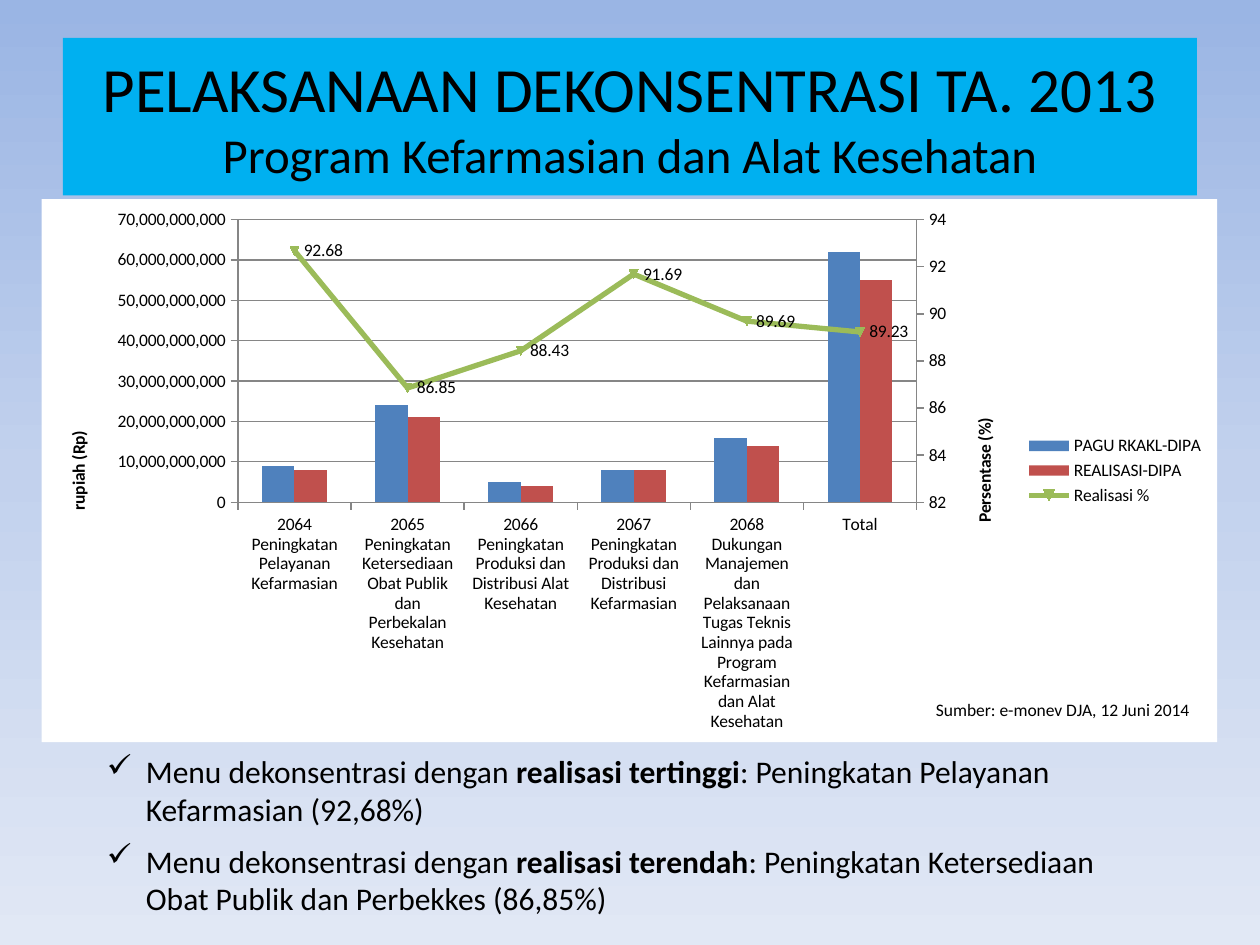
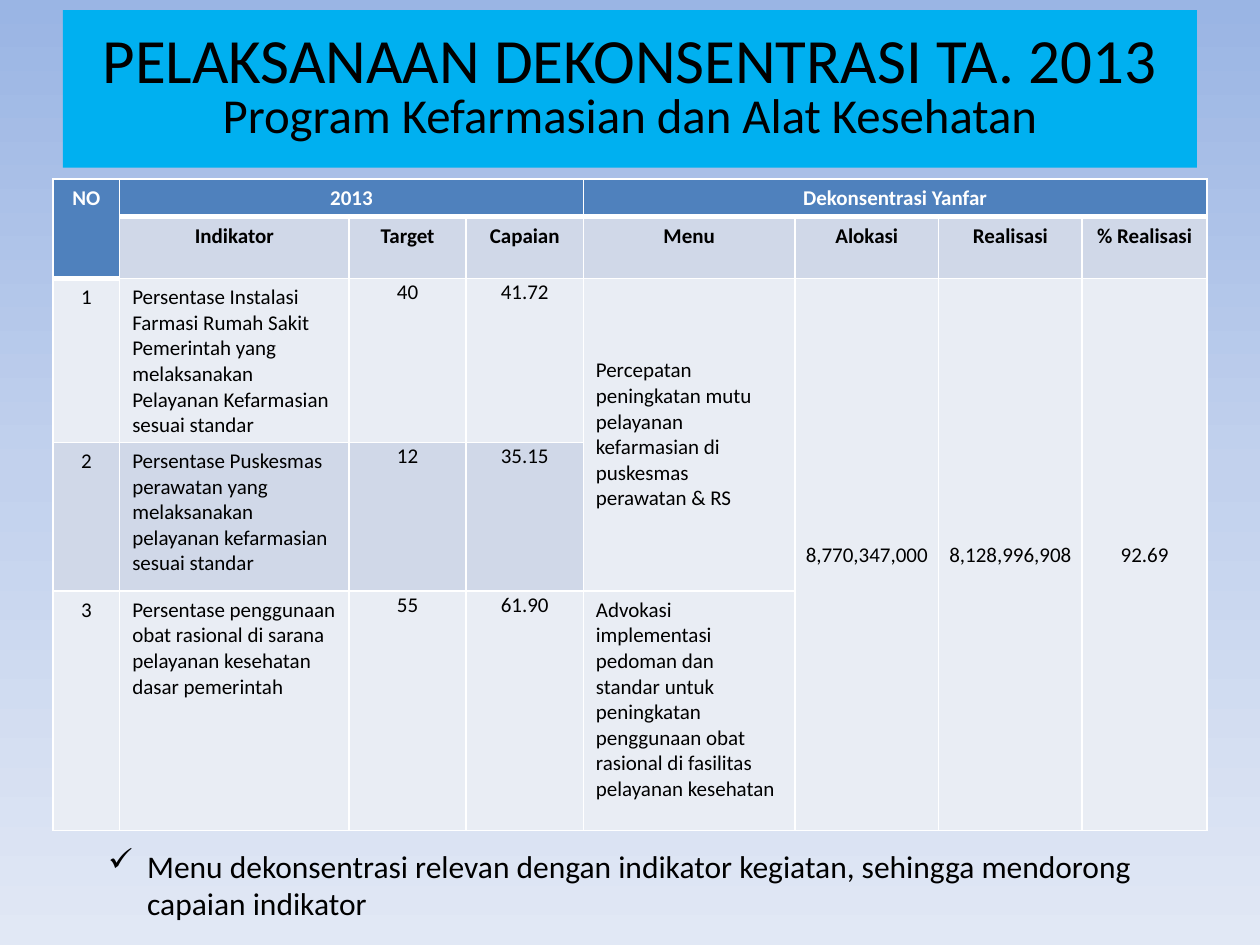
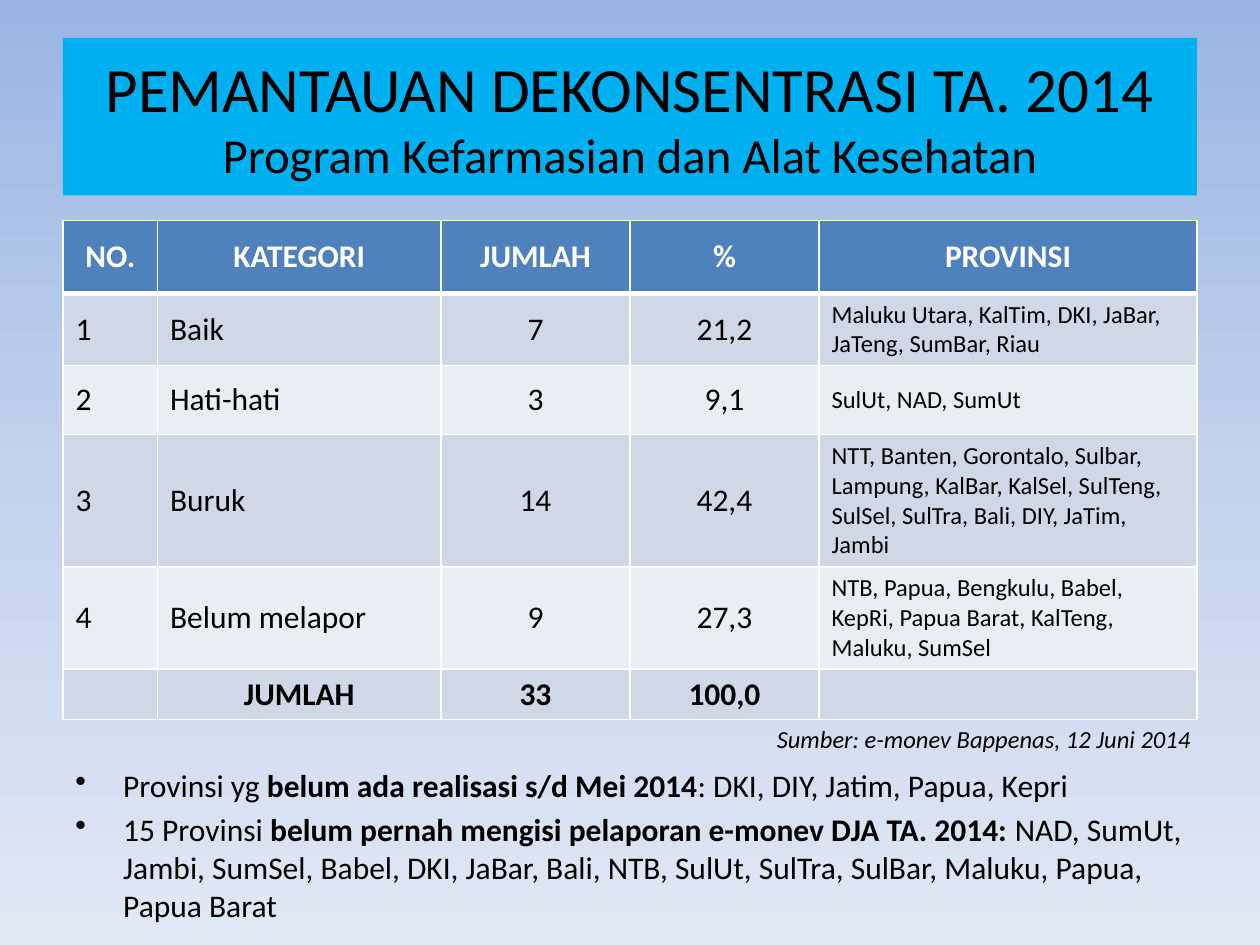
from copy import deepcopy

from lxml import etree
from pptx import Presentation
from pptx.chart.data import CategoryChartData
from pptx.dml.color import RGBColor
from pptx.enum.chart import XL_CHART_TYPE, XL_LABEL_POSITION, XL_LEGEND_POSITION, XL_TICK_MARK
from pptx.enum.shapes import MSO_SHAPE
from pptx.enum.text import MSO_ANCHOR, MSO_AUTO_SIZE, PP_ALIGN
from pptx.oxml import parse_xml
from pptx.oxml.ns import nsdecls, qn
from pptx.util import Inches, Pt

LEFT, CENTER, RIGHT = PP_ALIGN.LEFT, PP_ALIGN.CENTER, PP_ALIGN.RIGHT
TOP, MIDDLE = MSO_ANCHOR.TOP, MSO_ANCHOR.MIDDLE
OUTSIDE = XL_TICK_MARK.OUTSIDE

# Shared look
FONT = "Calibri"
BLACK, WHITE, GRAY = "000000", "FFFFFF", "868686"
BAND, HEADER, DARK_ROW, LIGHT_ROW = "00B0F0", "4F81BD", "D0D8E8", "E9EDF4"
BACKGROUND = [(0, "9AB5E4"), (0.5, "C2D1ED"), (1, "E1E8F5")]
PROGRAM = "Program Kefarmasian dan Alat Kesehatan"

# Slide 1: budget chart
CATEGORIES = [
    "2064 Peningkatan Pelayanan Kefarmasian",
    "2065 Peningkatan Ketersediaan Obat Publik dan Perbekalan Kesehatan",
    "2066 Peningkatan Produksi dan Distribusi Alat Kesehatan",
    "2067 Peningkatan Produksi dan Distribusi Kefarmasian",
    "2068 Dukungan Manajemen dan Pelaksanaan Tugas Teknis Lainnya pada "
    "Program Kefarmasian dan Alat Kesehatan",
    "Total",
]
BILLION = 1_000_000_000
SERIES = [
    ("PAGU RKAKL-DIPA", "4F81BD", [value * BILLION for value in (9, 24, 5, 8, 16, 62)]),
    ("REALISASI-DIPA", "C0504D", [value * BILLION for value in (8, 21, 4, 8, 14, 55)]),
    ("Realisasi %", "9BBB59", [92.68, 86.85, 88.43, 91.69, 89.69, 89.23]),
]
FINDINGS = [
    [("Menu dekonsentrasi dengan ", False), ("realisasi tertinggi", True),
     (": Peningkatan Pelayanan Kefarmasian (92,68%)", False)],
    [("Menu dekonsentrasi dengan ", False), ("realisasi terendah", True),
     (": Peningkatan Ketersediaan Obat Publik dan Perbekkes (86,85%)", False)],
]

# Slide 2: indicators and their menus
INDICATOR_ROWS = [
    ["NO", "2013", "", "", "Dekonsentrasi Yanfar", "", "", ""],
    ["", "Indikator", "Target", "Capaian", "Menu", "Alokasi", "Realisasi", "% Realisasi"],
    ["1", "Persentase Instalasi Farmasi Rumah Sakit Pemerintah yang melaksanakan "
     "Pelayanan Kefarmasian sesuai standar", "40", "41.72",
     "Percepatan peningkatan mutu pelayanan kefarmasian di puskesmas perawatan & RS",
     "8,770,347,000", "8,128,996,908", "92.69"],
    ["2", "Persentase Puskesmas perawatan yang melaksanakan pelayanan kefarmasian "
     "sesuai standar", "12", "35.15", "", "", "", ""],
    ["3", "Persentase penggunaan obat rasional di sarana pelayanan kesehatan dasar "
     "pemerintah", "55", "61.90",
     "Advokasi implementasi pedoman dan standar untuk peningkatan penggunaan obat "
     "rasional di fasilitas pelayanan kesehatan", "", "", ""],
]
INDICATOR_WIDTHS = [0.53, 1.82, 0.93, 0.93, 1.68, 1.14, 1.14, 0.99]
INDICATOR_HEIGHTS = [0.3, 0.49, 1.3, 1.18, 1.9]
INDICATOR_FILLS = [HEADER, DARK_ROW, LIGHT_ROW, DARK_ROW, LIGHT_ROW]
# First row, first column, last row, last column
INDICATOR_MERGES = [(0, 0, 1, 0), (0, 1, 0, 3), (0, 4, 0, 7), (2, 4, 3, 4),
                    (2, 5, 4, 5), (2, 6, 4, 6), (2, 7, 4, 7)]
RELEVANCE = [("Menu dekonsentrasi relevan dengan indikator kegiatan, sehingga mendorong "
              "capaian indikator", False)]

# Slide 3: reporting categories
REPORT_ROWS = [
    ["NO.", "KATEGORI", "JUMLAH", "%", "PROVINSI"],
    ["1", "Baik", "7", "21,2", "Maluku Utara, KalTim, DKI, JaBar, JaTeng, SumBar, Riau"],
    ["2", "Hati-hati", "3", "9,1", "SulUt, NAD, SumUt"],
    ["3", "Buruk", "14", "42,4", "NTT, Banten, Gorontalo, Sulbar, Lampung, KalBar, KalSel, "
     "SulTeng, SulSel, SulTra, Bali, DIY, JaTim, Jambi"],
    ["4", "Belum melapor", "9", "27,3", "NTB, Papua, Bengkulu, Babel, KepRi, Papua Barat, "
     "KalTeng, Maluku, SumSel"],
    ["", "JUMLAH", "33", "100,0", ""],
]
REPORT_WIDTHS = [0.75, 2.25, 1.5, 1.5, 3]
REPORT_HEIGHTS = [0.58, 0.57, 0.55, 1.05, 0.81, 0.4]
REPORT_FILLS = [HEADER, DARK_ROW, LIGHT_ROW, DARK_ROW, LIGHT_ROW, DARK_ROW]
PROVINCE_NOTES = [
    [("Provinsi yg ", False), ("belum ada realisasi s/d Mei 2014", True),
     (": DKI, DIY, Jatim, Papua, Kepri", False)],
    [("15 Provinsi ", False),
     ("belum pernah mengisi pelaporan e-monev DJA TA. 2014: ", True),
     ("NAD, SumUt, Jambi, SumSel, Babel, DKI, JaBar, Bali, NTB, SulUt, SulTra, SulBar, "
      "Maluku, Papua, Papua Barat", False)],
]


def color(value):
    return RGBColor.from_string(value)


def set_font(font, size, ink=BLACK, **values):
    font.color.rgb = color(ink)
    for name, value in dict(name=FONT, size=Pt(size), **values).items():
        setattr(font, name, value)


def add_run(paragraph, text, size, ink=BLACK, **values):
    run = paragraph.add_run()
    run.text = text
    set_font(run.font, size, ink, **values)


def add_slide(presentation):
    slide = presentation.slides.add_slide(presentation.slide_layouts[6])
    fill = slide.background.fill
    fill.gradient()
    fill.gradient_angle = 270
    stop_list = next(slide.element.iter(qn("a:gsLst")))
    stop_list.append(deepcopy(stop_list[0]))
    for stop, (position, value) in zip(fill.gradient_stops, BACKGROUND):
        stop.position = position
        stop.color.rgb = color(value)
    return slide


def add_title(slide, title, top=0.3, line_spacing=1.0):
    band = slide.shapes.add_shape(MSO_SHAPE.RECTANGLE, Inches(0.5), Inches(top),
                                  Inches(9), Inches(1.25))
    band.shadow.inherit = False
    band.fill.solid()
    band.fill.fore_color.rgb = color(BAND)
    band.line.fill.background()
    band.text_frame.vertical_anchor = MIDDLE
    paragraph = band.text_frame.paragraphs[0]
    paragraph.alignment = CENTER
    paragraph.line_spacing = line_spacing
    add_run(paragraph, title, 36)
    paragraph.add_line_break()
    add_run(paragraph, PROGRAM, 27.9)


def add_text_frame(slide, place, grow=True):
    frame = slide.shapes.add_textbox(*map(Inches, place)).text_frame
    frame.word_wrap = True
    frame.auto_size = MSO_AUTO_SIZE.SHAPE_TO_FIT_TEXT if grow else MSO_AUTO_SIZE.NONE
    return frame


def add_source(slide, place, text, size, alignment=LEFT, italic=False):
    paragraph = add_text_frame(slide, place).paragraphs[0]
    paragraph.alignment = alignment
    add_run(paragraph, text, size, italic=italic)


def add_bullets(slide, place, items, bullet="✓", indent=0.31, space=0, grow=True):
    frame = add_text_frame(slide, place, grow)
    for index, runs in enumerate(items):
        paragraph = frame.add_paragraph() if index else frame.paragraphs[0]
        paragraph.space_before = Pt(space)
        properties = paragraph._p.get_or_add_pPr()
        properties.set("marL", str(Inches(indent)))
        properties.set("indent", str(-Inches(indent)))
        etree.SubElement(properties, qn("a:buChar")).set("char", bullet)
        for text, bold in runs:
            add_run(paragraph, text, 18, bold=bold)


def set_borders(cell, widths):
    properties = cell._tc.get_or_add_tcPr()
    for index, (side, width) in enumerate(widths.items()):
        properties.insert(index, parse_xml(
            f'<a:{side} {nsdecls("a")} w="{Pt(width)}"><a:solidFill>'
            f'<a:srgbClr val="{WHITE}"/></a:solidFill></a:{side}>'))


def add_table(slide, left, top, widths, heights, rows, fills, style, merges=()):
    table = slide.shapes.add_table(len(rows), len(widths), Inches(left), Inches(top),
                                   Inches(sum(widths)), Inches(sum(heights))).table
    table.first_row = table.horz_banding = False
    for column, width in zip(table.columns, widths):
        column.width = Inches(width)
    for row, height in zip(table.rows, heights):
        row.height = Inches(height)

    # A merged header keeps its fill over every row it spans
    def fill_at(row, column):
        for first_row, first_column, last_row, last_column in merges:
            if first_row <= row <= last_row and first_column <= column <= last_column:
                return fills[first_row]
        return fills[row]

    for row, texts in enumerate(rows):
        for column, text in enumerate(texts):
            cell = table.cell(row, column)
            cell.fill.solid()
            cell.fill.fore_color.rgb = color(fill_at(row, column))
            under_header = row and fill_at(row - 1, column) == HEADER
            set_borders(cell, {"lnL": 1, "lnR": 1, "lnT": 3 if under_header else 1,
                               "lnB": 3 if fill_at(row, column) == HEADER else 1})
            alignment, font, cell_values = style(row, column)
            for name, value in cell_values.items():
                setattr(cell, name, value)
            if text:
                paragraph = cell.text_frame.paragraphs[0]
                paragraph.alignment = alignment
                add_run(paragraph, text, **font)
    for first_row, first_column, last_row, last_column in merges:
        table.cell(first_row, first_column).merge(table.cell(last_row, last_column))


def indicator_style(row, column):
    heading = row < 2
    font = dict(size=12, ink=BLACK if row else WHITE, bold=heading)
    values = dict(vertical_anchor=MIDDLE if row == 2 and column >= 4 else TOP)
    if not heading and column in (2, 3, 5, 6, 7):
        tight = Inches(0.01)
        values.update(margin_left=tight, margin_right=tight, margin_top=tight, margin_bottom=0)
    return CENTER if heading or column not in (1, 4) else LEFT, font, values


def report_style(row, column):
    heading, total = row == 0, row == len(REPORT_ROWS) - 1
    font = dict(size=14 if column == 4 and not heading else 18,
                ink=WHITE if heading else BLACK, bold=heading or total)
    centered = heading or total or column in (2, 3)
    return CENTER if centered else LEFT, font, dict(vertical_anchor=TOP if total else MIDDLE)


def set_axis_title(axis, text):
    paragraph = axis.axis_title.text_frame.paragraphs[0]
    add_run(paragraph, text, 10, bold=True)


def remove_children(element, name):
    for child in element.findall(qn(name)):
        element.remove(child)


def move_to_right_axis(chart, title):
    """Turn the last column series into a line on a second value axis."""
    plot_area = next(chart._chartSpace.iter(qn("c:plotArea")))
    bars = plot_area.find(qn("c:barChart"))
    series = bars.findall(qn("c:ser"))[-1]
    remove_children(series, "c:invertIfNegative")
    line_chart = parse_xml(
        f'<c:lineChart {nsdecls("c")}><c:grouping val="standard"/><c:varyColors val="0"/>'
        '<c:marker val="1"/><c:axId val="5001"/><c:axId val="5002"/></c:lineChart>')
    line_chart.insert(2, series)
    bars.addnext(line_chart)

    category_axis = plot_area.find(qn("c:catAx"))
    value_axis = plot_area.find(qn("c:valAx"))
    right_axis, hidden_axis = deepcopy(value_axis), deepcopy(category_axis)
    value_axis.addnext(right_axis)
    right_axis.addnext(hidden_axis)
    remove_children(right_axis, "c:majorGridlines")
    next(right_axis.iter(qn("a:t"))).text = title
    right_axis.find(qn("c:numFmt")).set("formatCode", "General")
    for axis, values in (
            (right_axis, dict(axId="5002", crossAx="5001", axPos="r", crosses="max")),
            (hidden_axis, dict(axId="5001", crossAx="5002", delete="1"))):
        for name, value in values.items():
            axis.find(qn(f"c:{name}")).set("val", value)


def add_budget_chart(slide):
    data = CategoryChartData()
    data.categories = CATEGORIES
    for name, _, values in SERIES:
        data.add_series(name, values)
    chart = slide.shapes.add_chart(XL_CHART_TYPE.COLUMN_CLUSTERED, Inches(0.33), Inches(1.58),
                                   Inches(9.33), Inches(4.31), data).chart
    set_font(chart.font, 10)
    chart.has_title = False
    chart.has_legend = True
    chart.legend.position = XL_LEGEND_POSITION.RIGHT
    chart.legend.include_in_layout = False
    chart._chartSpace.find(qn("c:txPr")).addprevious(parse_xml(
        f'<c:spPr {nsdecls("c", "a")}><a:solidFill><a:srgbClr val="{WHITE}"/></a:solidFill>'
        '<a:ln><a:noFill/></a:ln></c:spPr>'))

    # Axes
    value_axis = chart.value_axis
    for axis in (chart.category_axis, value_axis):
        axis.major_tick_mark = OUTSIDE
        axis.format.line.color.rgb = color(GRAY)
    value_axis.has_major_gridlines = True
    value_axis.major_gridlines.format.line.color.rgb = color(GRAY)
    value_axis.tick_labels.number_format = "#,##0"
    value_axis.tick_labels.number_format_is_linked = False
    set_axis_title(value_axis, "rupiah (Rp)")
    move_to_right_axis(chart, "Persentase (%)")

    # Columns and line
    columns, lines = chart.plots
    columns.gap_width, columns.overlap = 150, 0
    columns.vary_by_categories = False
    for series, (_, value, _) in zip(columns.series, SERIES):
        series.format.fill.solid()
        series.format.fill.fore_color.rgb = color(value)
    percentage = lines.series[0]
    percentage.smooth = False
    percentage.format.line.color.rgb = color(SERIES[-1][1])
    percentage.format.line.width = Pt(3)
    labels = percentage.data_labels
    labels.show_value = True
    labels.position = XL_LABEL_POSITION.RIGHT
    set_font(labels.font, 10)


def main():
    presentation = Presentation()
    presentation.slide_width, presentation.slide_height = Inches(10), Inches(7.5)

    # Slide 1
    slide = add_slide(presentation)
    add_title(slide, "PELAKSANAAN DEKONSENTRASI TA. 2013")
    add_budget_chart(slide)
    add_source(slide, (7.33, 5.5, 2.25, 0.27), "Sumber: e-monev DJA, 12 Juni 2014", 10)
    for index, finding in enumerate(FINDINGS):
        add_bullets(slide, (0.75, 5.92 + index * 0.71, 8.5, 0.71), [finding])

    # Slide 2
    slide = add_slide(presentation)
    add_title(slide, "PELAKSANAAN DEKONSENTRASI TA. 2013", top=0.08, line_spacing=0.8)
    add_bullets(slide, (0.76, 6.67, 8.5, 0.71), [RELEVANCE])
    add_table(slide, 0.42, 1.42, INDICATOR_WIDTHS, INDICATOR_HEIGHTS, INDICATOR_ROWS,
              INDICATOR_FILLS, indicator_style, INDICATOR_MERGES)

    # Slide 3
    slide = add_slide(presentation)
    add_table(slide, 0.5, 1.75, REPORT_WIDTHS, REPORT_HEIGHTS, REPORT_ROWS,
              REPORT_FILLS, report_style)
    add_title(slide, "PEMANTAUAN DEKONSENTRASI TA. 2014")
    add_source(slide, (5.8, 5.7, 3.75, 0.34), "Sumber: e-monev Bappenas, 12 Juni 2014", 14,
               RIGHT, italic=True)
    add_bullets(slide, (0.5, 6.03, 9, 1.47), PROVINCE_NOTES, bullet="•", indent=0.38,
                space=3.6, grow=False)

    presentation.save("out.pptx")


if __name__ == "__main__":
    main()
